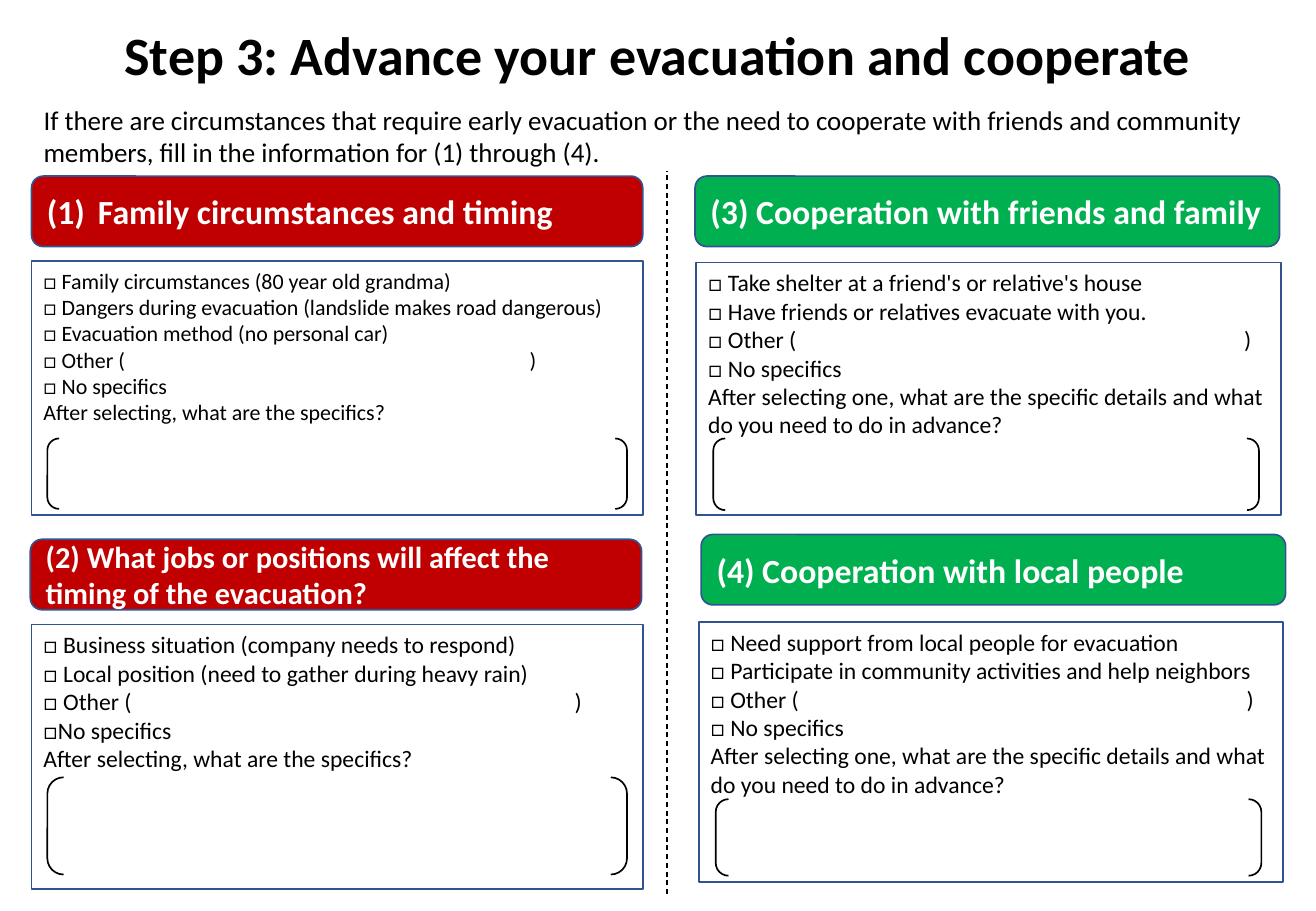
from lxml import etree
from pptx import Presentation
from pptx.dml.color import RGBColor
from pptx.enum.dml import MSO_LINE
from pptx.enum.shapes import MSO_CONNECTOR, MSO_SHAPE
from pptx.enum.text import MSO_ANCHOR, MSO_AUTO_SIZE, PP_ALIGN
from pptx.oxml.ns import qn
from pptx.util import Inches, Pt

RECTANGLE = MSO_SHAPE.RECTANGLE
ROUNDED = MSO_SHAPE.ROUNDED_RECTANGLE
BRACKETS = MSO_SHAPE.DOUBLE_BRACKET
STRAIGHT = MSO_CONNECTOR.STRAIGHT
DASH = MSO_LINE.DASH
TOP, MIDDLE = MSO_ANCHOR.TOP, MSO_ANCHOR.MIDDLE
LEFT, CENTER = PP_ALIGN.LEFT, PP_ALIGN.CENTER
NO_AUTOFIT = MSO_AUTO_SIZE.NONE

# Content
FONT = "Calibri"
BLACK, WHITE, BORDER = "000000", "FFFFFF", "31538F"
TITLE = "Step 3: Advance your evacuation and cooperate"
INTRO = ("If there are circumstances that require early evacuation or the need to "
         "cooperate with friends and community members, fill in the information for "
         "(1) through (4).")
OTHER = "□ Other (\t)"
NO_SPECIFICS = "□ No specifics"
ASK_SPECIFICS = "After selecting, what are the specifics?"
ASK_DETAILS = ("After selecting one, what are the specific details and what do you "
               "need to do in advance?")

# Columns: width, heading colour, space between panel edge and bracket (left, right)
COLUMNS = {
    "family": (5.03, "C00000", 0.13, 0.13),
    "others": (4.81, "00B050", 0.14, 0.18),
}
HEADING_HEIGHT = 0.58

# Panels: heading and body give (left, top); bracket gives (top, height)
PANELS = [
    dict(column="family", title="(1)\tFamily circumstances and timing", title_size=20,
         heading=(0.26, 1.45), body=(0.26, 2.15), height=2.09, bracket=(3.61, 0.58),
         size=13, closing_tab=4.0,
         lines=["□ Family circumstances (80 year old grandma)",
                "□ Dangers during evacuation (landslide makes road dangerous)",
                "□ Evacuation method (no personal car)",
                OTHER, NO_SPECIFICS, ASK_SPECIFICS]),
    dict(column="family", title_size=18,
         title="(2) What jobs or positions will affect the timing of the evacuation?",
         heading=(0.25, 4.44), body=(0.26, 5.14), height=2.18, bracket=(6.4, 0.8),
         size=14, closing_tab=4.37,
         lines=["□ Business situation (company needs to respond)",
                "□ Local position (need to gather during heavy rain)",
                OTHER, "□No specifics", ASK_SPECIFICS]),
    dict(column="others", title="(3) Cooperation with friends and family", title_size=20,
         heading=(5.72, 1.45), body=(5.73, 2.16), height=2.08, bracket=(3.61, 0.59),
         size=14, closing_tab=4.41,
         lines=["□ Take shelter at a friend's or relative's house",
                "□ Have friends or relatives evacuate with you.",
                OTHER, NO_SPECIFICS, ASK_DETAILS]),
    dict(column="others", title="(4) Cooperation with local people", title_size=20,
         heading=(5.77, 4.4), body=(5.75, 5.12), height=2.14, bracket=(6.58, 0.63),
         size=14, closing_tab=4.41,
         lines=["□ Need support from local people for evacuation",
                "□ Participate in community activities and help neighbors",
                OTHER, NO_SPECIFICS, ASK_DETAILS]),
]
HEADING_TAB = 0.42


def color(value):
    return RGBColor.from_string(value)


def add_box(page, kind, place, fill=None, line=None):
    box = page.shapes.add_shape(kind, *[Inches(length) for length in place])
    box.shadow.inherit = False
    if fill:
        box.fill.solid()
        box.fill.fore_color.rgb = color(fill)
    else:
        box.fill.background()
    if line:
        box.line.color.rgb = color(line)
        box.line.width = Pt(1)
    else:
        box.line.fill.background()
    return box


def write(box, lines, size, ink=BLACK, bold=False, align=LEFT, anchor=MIDDLE, tab=None):
    frame = box.text_frame
    frame.text = "\n".join(lines)
    frame.word_wrap = True
    frame.auto_size = NO_AUTOFIT
    frame.vertical_anchor = anchor
    for para in frame.paragraphs:
        para.alignment = align
        if "\t" in para.text:
            tabs = etree.SubElement(para._p.get_or_add_pPr(), qn("a:tabLst"))
            etree.SubElement(tabs, qn("a:tab"), pos=str(Inches(tab)), algn="l")
        for span in para.runs:
            span.font.name = FONT
            span.font.size = Pt(size)
            span.font.bold = bold
            span.font.color.rgb = color(ink)


def add_panel(page, panel):
    width, accent, bracket_left, bracket_right = COLUMNS[panel["column"]]
    heading = add_box(page, ROUNDED, (*panel["heading"], width, HEADING_HEIGHT), accent, BORDER)
    write(heading, [panel["title"]], panel["title_size"], WHITE, True, tab=HEADING_TAB)

    body = add_box(page, RECTANGLE, (*panel["body"], width, panel["height"]), line=BORDER)
    write(body, panel["lines"], panel["size"], anchor=TOP, tab=panel["closing_tab"])

    top, height = panel["bracket"]
    left = panel["body"][0] + bracket_left
    add_box(page, BRACKETS, (left, top, width - bracket_left - bracket_right, height), line=BLACK)


def main():
    deck = Presentation()
    deck.slide_width, deck.slide_height = Inches(10.83), Inches(7.5)
    page = deck.slides.add_slide(deck.slide_layouts[5])

    # Title and introduction
    title = page.shapes.title
    title.left, title.top = 0, Inches(0.09)
    title.width, title.height = deck.slide_width, Inches(0.71)
    write(title, [TITLE], 32, bold=True, align=CENTER)
    intro = add_box(page, RECTANGLE, (0.26, 0.89, 10.31, 0.45), WHITE)
    write(intro, [INTRO], 16)

    # Divider between the columns
    divider = page.shapes.add_connector(
        STRAIGHT, Inches(5.49), Inches(7.36), Inches(5.49), Inches(1.41))
    divider.line.color.rgb = color(BLACK)
    divider.line.width = Pt(0.75)
    divider.line.dash_style = DASH
    etree.SubElement(divider._element.spPr, qn("a:effectLst"))

    # Four panels
    for panel in PANELS:
        add_panel(page, panel)

    deck.save("out.pptx")


if __name__ == "__main__":
    main()
